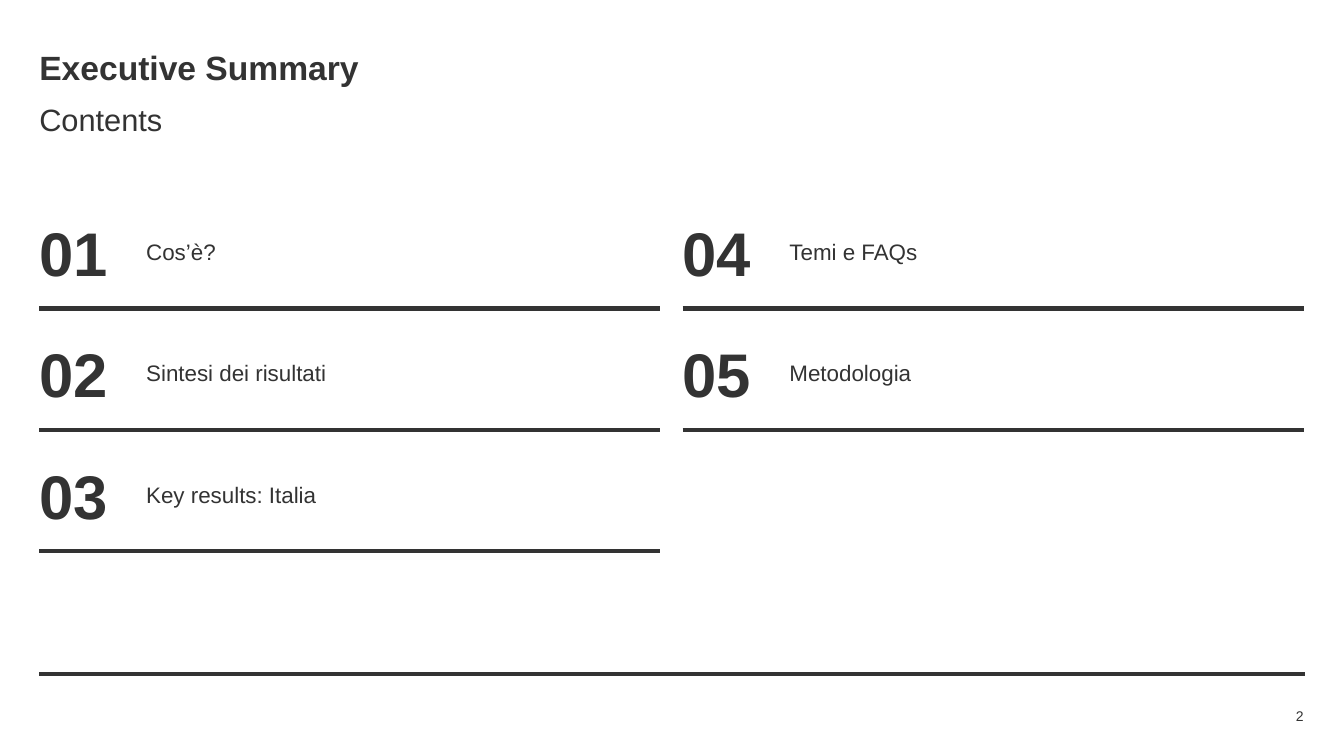
from lxml.etree import SubElement
from pptx import Presentation
from pptx.dml.color import RGBColor
from pptx.enum.shapes import MSO_CONNECTOR
from pptx.enum.text import MSO_ANCHOR, PP_ALIGN
from pptx.oxml.ns import qn
from pptx.util import Inches, Pt

DARK_GREY = RGBColor(0x33, 0x33, 0x33)
LEFT_MARGIN = 0.39
COLUMN_STEP = 6.38
ROW_STEP = 1.205
ROWS_PER_COLUMN = 3
SECTIONS = [
    "Cos’è?",
    "Sintesi dei risultati",
    "Key results: Italia",
    "Temi e FAQs",
    "Metodologia",
]

presentation = Presentation()
presentation.slide_width = Inches(13.33)
presentation.slide_height = Inches(7.5)
slide = presentation.slides.add_slide(presentation.slide_layouts[6])


def add_text(text, left, top, width, height, size, bold=False,
             align=PP_ALIGN.LEFT, anchor=MSO_ANCHOR.TOP):
    box = slide.shapes.add_textbox(
        Inches(left), Inches(top), Inches(width), Inches(height))
    frame = box.text_frame
    frame.word_wrap = True
    frame.vertical_anchor = anchor
    frame.margin_left = frame.margin_right = 0
    frame.margin_top = frame.margin_bottom = 0
    paragraph = frame.paragraphs[0]
    paragraph.alignment = align
    run = paragraph.add_run()
    run.text = text
    run.font.name = "Arial"
    run.font.size = Pt(size)
    run.font.bold = bold
    run.font.color.rgb = DARK_GREY


def add_rule(left, right, y):
    """Draw a thick horizontal line."""
    rule = slide.shapes.add_connector(
        MSO_CONNECTOR.STRAIGHT, Inches(left), Inches(y), Inches(right), Inches(y))
    rule.line.color.rgb = DARK_GREY
    rule.line.width = Pt(3)
    SubElement(rule._element.spPr, qn("a:effectLst"))


add_text("Executive Summary", LEFT_MARGIN, 0.47, 12.54, 0.44, 24, bold=True)
add_text("Contents", LEFT_MARGIN, 1, 12.54, 0.43, 22)

for index, section in enumerate(SECTIONS):
    column, row = divmod(index, ROWS_PER_COLUMN)
    left = LEFT_MARGIN + column * COLUMN_STEP
    top = 2.13 + row * ROW_STEP
    add_text(f"{index + 1:02}", left, top, 0.88, 0.74, 44, bold=True)
    add_text(section, left + 1.06, top + 0.23, 5.11, 0.27, 16)
    add_rule(left, left + 6.16, top + 0.93)

add_rule(LEFT_MARGIN, 12.94, 6.69)
add_text("2", 11.87, 6.99, 1.06, 0.22, 10,
         align=PP_ALIGN.RIGHT, anchor=MSO_ANCHOR.MIDDLE)

presentation.save("out.pptx")
